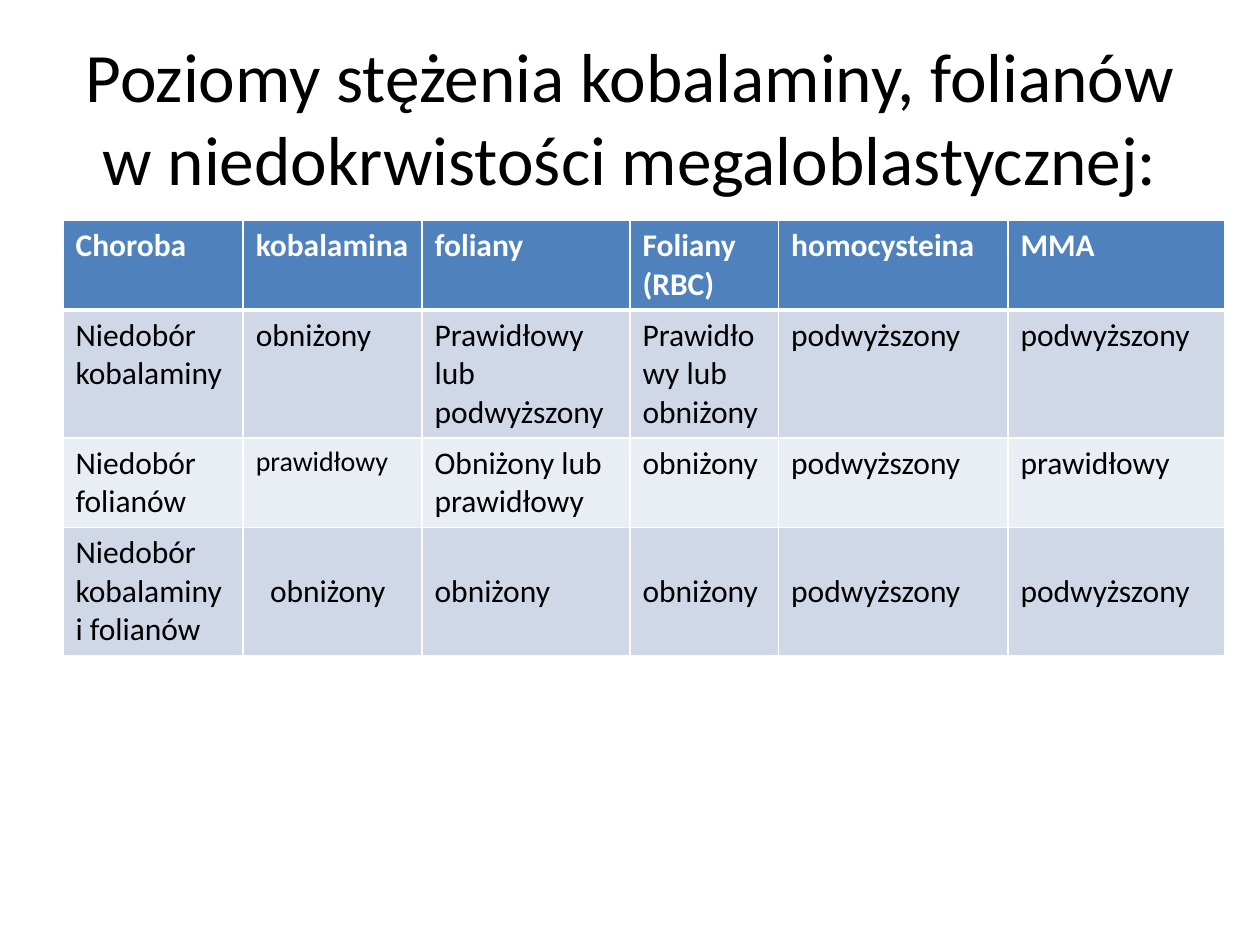
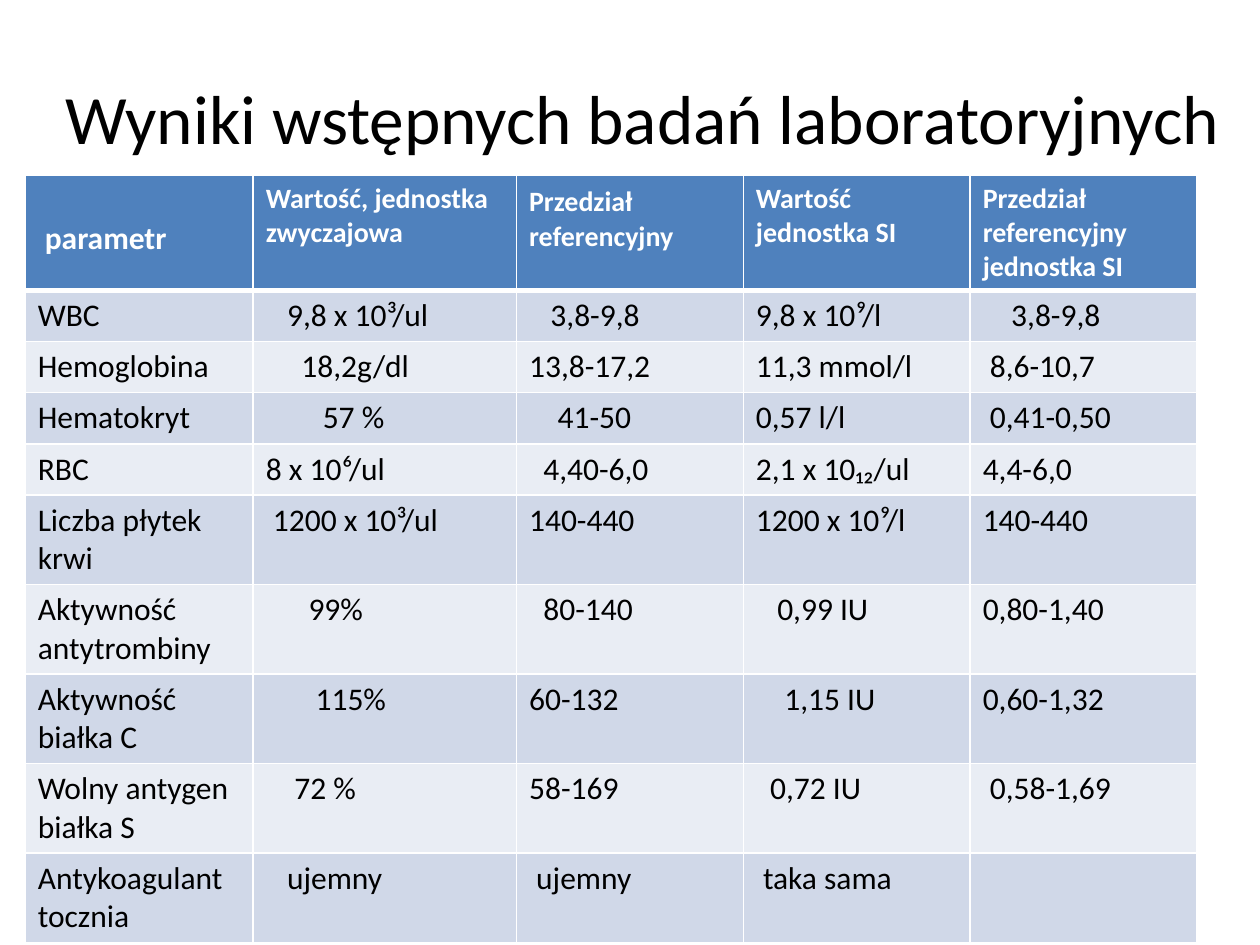
from dataclasses import dataclass
from typing import Any, NamedTuple

from lxml.etree import SubElement
from pptx import Presentation
from pptx.dml.color import RGBColor as Rgb
from pptx.enum.text import MSO_ANCHOR as Anchor, MSO_AUTO_SIZE as AutoSize, PP_ALIGN as Align
from pptx.oxml.ns import qn
from pptx.util import Emu, Inches, Pt

SLIDE_WIDTH, SLIDE_HEIGHT = Inches(10), Inches(7.5)
GRID_COLUMNS, GRID_ROWS = 100, 75


@dataclass(frozen=True)
class Theme:
    font: str = "Calibri"
    ink: str = "000000"
    paper: str = "FFFFFF"
    header: str = "4F81BD"
    bands: tuple[str, str] = ("D0D8E8", "E9EDF4")
    title_size: float = 39.6
    text_size: float = 18
    small_size: float = 16
    thin_border: float = 1
    thick_border: float = 3
    line: float = 3.05
    space: float = 0.565
    side_padding: float = 1
    end_padding: float = 0.5


class Frame(NamedTuple):
    left: float
    top: float
    width: float
    height: float


class Span(NamedTuple):
    text: str
    size: float


class Entry(NamedTuple):
    content: str | tuple[Span, ...]
    spaces: int = 0
    size: float = 18
    lines_above: int = 0


class Row(NamedTuple):
    lines: float
    entries: tuple[str | Entry, ...]


@dataclass(frozen=True)
class TablePage:
    title: str
    title_frame: Frame
    table_left: float
    table_top: float
    columns: tuple[float, ...]
    rows: tuple[Row, ...]


THEME = Theme()
SMALL = THEME.small_size


def across(columns: float) -> Emu:
    return Emu(round(SLIDE_WIDTH * columns / GRID_COLUMNS))


def down(rows: float) -> Emu:
    return Emu(round(SLIDE_HEIGHT * rows / GRID_ROWS))


def set_formats(target: Any, formats: dict[str, Any]) -> None:
    for name, value in formats.items():
        setattr(target, name, value)


def style_font(font: Any, size: float, color: str, bold: bool = False) -> None:
    set_formats(font, {"name": THEME.font, "size": Pt(size), "bold": bold})
    font.color.rgb = Rgb.from_string(color)


def add_title(page: Any, text: str, frame: Frame) -> None:
    box = page.shapes.title
    set_formats(box, {
        "left": across(frame.left), "top": down(frame.top),
        "width": across(frame.width), "height": down(frame.height),
    })
    set_formats(box.text_frame, {
        "word_wrap": True, "auto_size": AutoSize.NONE, "vertical_anchor": Anchor.MIDDLE,
    })
    para = box.text_frame.paragraphs[0]
    para.alignment = Align.CENTER
    span = para.add_run()
    span.text = text
    style_font(span.font, THEME.title_size, THEME.ink)


def add_borders(cell: Any, row_index: int) -> None:
    thin, thick = THEME.thin_border, THEME.thick_border
    widths = {
        "lnL": thin, "lnR": thin,
        "lnT": thick if row_index == 1 else thin,
        "lnB": thick if row_index == 0 else thin,
    }
    properties = cell._tc.get_or_add_tcPr()
    for position, (tag, width) in enumerate(widths.items()):
        border = SubElement(properties, qn(f"a:{tag}"), w=str(Pt(width)))
        fill = SubElement(border, qn("a:solidFill"))
        SubElement(fill, qn("a:srgbClr"), val=THEME.paper)
        properties.insert(position, border)


def fill_cell(cell: Any, entry: Entry, row_index: int) -> None:
    is_header = row_index == 0
    set_formats(cell, {
        "margin_left": across(THEME.side_padding + entry.spaces * THEME.space),
        "margin_right": across(THEME.side_padding),
        "margin_top": down(THEME.end_padding + entry.lines_above * THEME.line),
        "margin_bottom": down(THEME.end_padding),
        "vertical_anchor": Anchor.TOP,
    })
    cell.fill.solid()
    cell.fill.fore_color.rgb = Rgb.from_string(
        THEME.header if is_header else THEME.bands[(row_index - 1) % 2])
    add_borders(cell, row_index)
    if isinstance(entry.content, str):
        paragraphs = [(Span(text, entry.size),) for text in entry.content.splitlines()]
    else:
        paragraphs = [entry.content]
    for index, parts in enumerate(paragraphs):
        para = cell.text_frame.add_paragraph() if index else cell.text_frame.paragraphs[0]
        for part in parts:
            span = para.add_run()
            span.text = part.text
            style_font(span.font, part.size, THEME.paper if is_header else THEME.ink, is_header)


def add_grid(page: Any, content: TablePage) -> None:
    heights = [row.lines * THEME.line + 2 * THEME.end_padding for row in content.rows]
    table = page.shapes.add_table(
        len(content.rows), len(content.columns),
        across(content.table_left), down(content.table_top),
        across(sum(content.columns)), down(sum(heights))).table
    table.horz_banding = False
    for column, width in zip(table.columns, content.columns):
        column.width = across(width)
    for row_index, row in enumerate(content.rows):
        table.rows[row_index].height = down(heights[row_index])
        for column_index, item in enumerate(row.entries):
            entry = Entry(item) if isinstance(item, str) else item
            fill_cell(table.cell(row_index, column_index), entry, row_index)


PAGES = (
    TablePage(
        "Poziomy stężenia kobalaminy, folianów w niedokrwistości megaloblastycznej:",
        Frame(5, 3, 90, 12.5), 5, 17.5, (14.3, 14.2, 16.5, 11.8, 18.2, 17.2),
        (
            Row(2, ("Choroba", "kobalamina", "foliany", "Foliany (RBC)", "homocysteina", "MMA")),
            Row(3, ("Niedobór kobalaminy", "obniżony", "Prawidłowy lub podwyższony",
                    "Prawidłowy lub\nobniżony", "podwyższony", "podwyższony")),
            Row(2, ("Niedobór folianów", Entry("prawidłowy", size=SMALL),
                    "Obniżony lub prawidłowy", "obniżony", "podwyższony", "prawidłowy")),
            Row(3, ("Niedobór kobalaminy i folianów", Entry("obniżony", 2, lines_above=1),
                    *(Entry(level, lines_above=1) for level in
                      ("obniżony", "obniżony", "podwyższony", "podwyższony")))),
        ),
    ),
    TablePage(
        "Wyniki wstępnych badań laboratoryjnych",
        Frame(2, 3, 98, 12.5), 2, 13.9, (18.1, 20.9, 18, 18, 18),
        (
            Row(2.6, (
                Entry("parametr", 1, lines_above=1),
                Entry("Wartość, jednostka zwyczajowa", size=SMALL),
                Entry((Span("Przedział", SMALL), Span(" ", THEME.text_size),
                       Span("referencyjny", SMALL))),
                Entry("Wartość jednostka SI", size=SMALL),
                Entry("Przedział referencyjny jednostka SI", size=SMALL))),
            Row(1, ("WBC", Entry("9,8 x 10³/ul", 3), Entry("3,8-9,8", 3),
                    "9,8 x 10⁹/l", Entry("3,8-9,8", 4))),
            Row(1, ("Hemoglobina", Entry("18,2g/dl", 5), "13,8-17,2",
                    "11,3 mmol/l", Entry("8,6-10,7", 1))),
            Row(1, ("Hematokryt", Entry("57 %", 8), Entry("41-50", 4),
                    "0,57 l/l", Entry("0,41-0,50", 1))),
            Row(1, ("RBC", "8 x 10⁶/ul", Entry("4,40-6,0", 2), "2,1 x 10₁₂/ul", "4,4-6,0")),
            Row(2, ("Liczba płytek krwi", Entry("1200 x 10³/ul", 1), "140-440",
                    "1200 x 10⁹/l", "140-440")),
            Row(2, ("Aktywność antytrombiny", Entry("99%", 6), Entry("80-140", 2),
                    Entry("0,99 IU", 3), "0,80-1,40")),
            Row(2, ("Aktywność białka C", Entry("115%", 7), "60-132",
                    Entry("1,15 IU", 4), "0,60-1,32")),
            Row(2, ("Wolny antygen białka S", Entry("72 %", 4), "58-169",
                    Entry("0,72 IU", 2), Entry("0,58-1,69", 1))),
            Row(2, ("Antykoagulant tocznia", Entry("ujemny", 3), Entry("ujemny", 1),
                    Entry("taka sama", 1), "")),
        ),
    ),
)


def main() -> None:
    deck = Presentation()
    set_formats(deck, {"slide_width": SLIDE_WIDTH, "slide_height": SLIDE_HEIGHT})
    title_only = deck.slide_layouts.get_by_name("Title Only")
    for content in PAGES:
        page = deck.slides.add_slide(title_only)
        add_title(page, content.title, content.title_frame)
        add_grid(page, content)
    deck.save("out.pptx")


if __name__ == "__main__":
    main()
